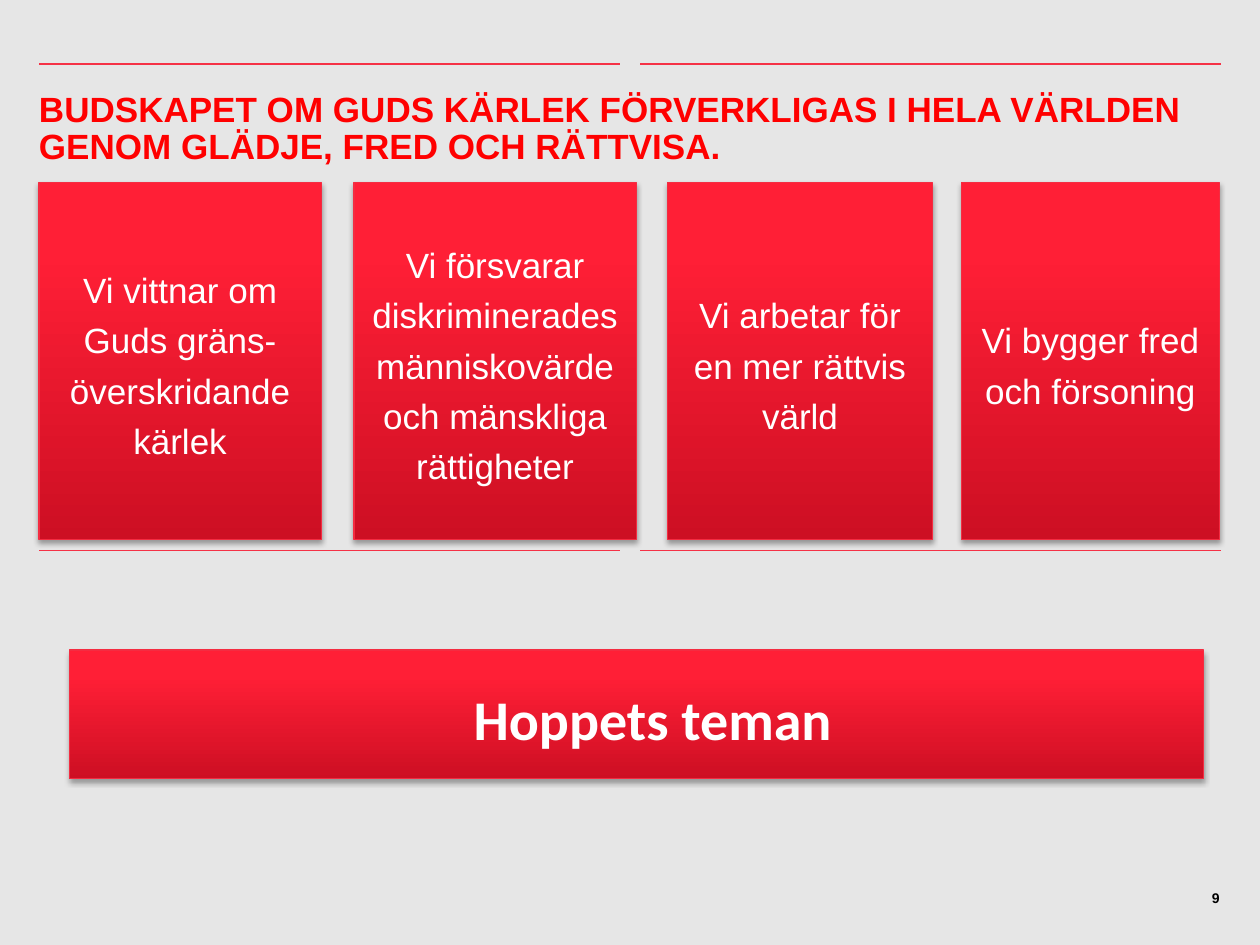
from pptx import Presentation
from pptx.dml.color import RGBColor
from pptx.enum.shapes import MSO_CONNECTOR, MSO_SHAPE
from pptx.enum.text import MSO_ANCHOR, PP_ALIGN
from pptx.oxml import parse_xml
from pptx.oxml.ns import nsdecls, qn
from pptx.util import Inches, Pt

STRAIGHT, RECT = MSO_CONNECTOR.STRAIGHT, MSO_SHAPE.RECTANGLE
LEFT, CENTER, RIGHT = PP_ALIGN.LEFT, PP_ALIGN.CENTER, PP_ALIGN.RIGHT
TOP, MIDDLE = MSO_ANCHOR.TOP, MSO_ANCHOR.MIDDLE
COLS, ROWS = 100, 75
STOPS = ((0, "CD0F23"), (80, "FF1F36"), (100, "FF2037"))
RULE_COLUMNS = ((3.1, 49.2), (50.8, 96.9))
RULE_ROWS = (5.1, 43.7)
CARDS = (
    (3.1, 22.4, "Vi vittnar om Guds gräns-överskridande kärlek"),
    (28.1, 22.4, "Vi försvarar diskriminerades människovärde och mänskliga rättigheter"),
    (53, 21, "Vi arbetar för en mer rättvis värld"),
    (76.3, 20.5, "Vi bygger fred och försoning"),
)
TITLE = {"name": "Arial", "size": Pt(20), "bold": True}
BODY = {"name": "Arial", "size": Pt(20), "bold": False}
BANNER = {"name": "Calibri", "size": Pt(32), "bold": True}
NUMBER = {"name": "Arial", "size": Pt(8), "bold": True}


def rgb(color):
    """Turn a hex string into a colour."""
    return RGBColor.from_string(color)


class Deck:
    """Holds the red style and the current slide."""

    def __init__(self):
        """Open a blank slide with a grey background."""
        self.prs = Presentation()
        self.prs.slide_width, self.prs.slide_height = Inches(10), Inches(7.5)
        self.s = self.prs.slides.add_slide(self.prs.slide_layouts[6])
        self.s.background.fill.solid()
        self.s.background.fill.fore_color.rgb = rgb("E6E6E6")

    def grid(self, *values):
        """Turn alternating columns and rows into lengths."""
        units = self.prs.slide_width / COLS, self.prs.slide_height / ROWS
        return [round(v * units[i % 2]) for i, v in enumerate(values)]

    def rule(self, start, end, row):
        """Draw a thin horizontal rule."""
        c = self.s.shapes.add_connector(STRAIGHT, *self.grid(start, row, end, row))
        c.line.color.rgb, c.line.width = rgb("F53246"), Pt(1)
        c._element.spPr.append(parse_xml(f"<a:effectLst {nsdecls('a')}/>"))

    def set_text(self, sp, text, font, color, align=LEFT, anchor=TOP, spacing=1, insets=(0, 0, 0, 0)):
        """Put one formatted paragraph into a shape."""
        tf = sp.text_frame
        sides = ("margin_left", "margin_top", "margin_right", "margin_bottom")
        frame = {"word_wrap": True, "vertical_anchor": anchor}
        frame.update(zip(sides, map(Inches, insets)))
        for key, value in frame.items():
            setattr(tf, key, value)
        p = tf.paragraphs[0]
        p.alignment, p.line_spacing = align, spacing
        r = p.add_run()
        r.text = text
        for key, value in font.items():
            setattr(r.font, key, value)
        r.font.color.rgb = rgb(color)

    def label(self, box, text, font, color, **layout):
        """Add a text box without insets."""
        self.set_text(self.s.shapes.add_textbox(*self.grid(*box)), text, font, color, **layout)

    def panel(self, box, text, font, **layout):
        """Add a shaded red rectangle with centred white text."""
        sp = self.s.shapes.add_shape(RECT, *self.grid(*box))
        stops = "".join(
            f'<a:gs pos="{pos * 1000}"><a:srgbClr val="{color}"/></a:gs>' for pos, color in STOPS
        )
        spPr = sp._element.spPr
        spPr.append(parse_xml(
            f'<a:gradFill {nsdecls("a")} rotWithShape="1"><a:gsLst>{stops}</a:gsLst>'
            '<a:lin ang="16200000" scaled="0"/></a:gradFill>'
        ))
        sp.line.color.rgb, sp.line.width = rgb("F42C41"), Pt(0.75)
        sp.shadow.inherit = False
        spPr.find(qn("a:effectLst")).append(parse_xml(
            f'<a:outerShdw {nsdecls("a")} blurRad="{Pt(3.1)}" dist="{Pt(1.8)}" dir="5400000" '
            'rotWithShape="0"><a:srgbClr val="000000"><a:alpha val="35000"/></a:srgbClr></a:outerShdw>'
        ))
        self.set_text(sp, text, font, "FFFFFF", align=CENTER, anchor=MIDDLE, **layout)


def main():
    """Build the slide and save it."""
    deck = Deck()
    for row in RULE_ROWS:
        for start, end in RULE_COLUMNS:
            deck.rule(start, end, row)
    deck.label(
        (3.1, 7.3, 93.7, 6.6),
        "BUDSKAPET OM GUDS KÄRLEK FÖRVERKLIGAS I HELA VÄRLDEN GENOM GLÄDJE, FRED OCH RÄTTVISA.",
        TITLE, "FF0000", spacing=0.9,
    )
    deck.label((93.3, 70.6, 3.5, 1.6), "9", NUMBER, "000000", align=RIGHT)
    deck.panel((5.5, 51.6, 90, 10.2), "Hoppets teman", BANNER, insets=(0.36, 0.1, 0.1, 0.05))
    for left, width, text in CARDS:
        deck.panel((left, 14.5, width, 28.3), text, BODY, spacing=1.2, insets=(0.08,) * 4)
    deck.prs.save("out.pptx")


if __name__ == "__main__":
    main()
